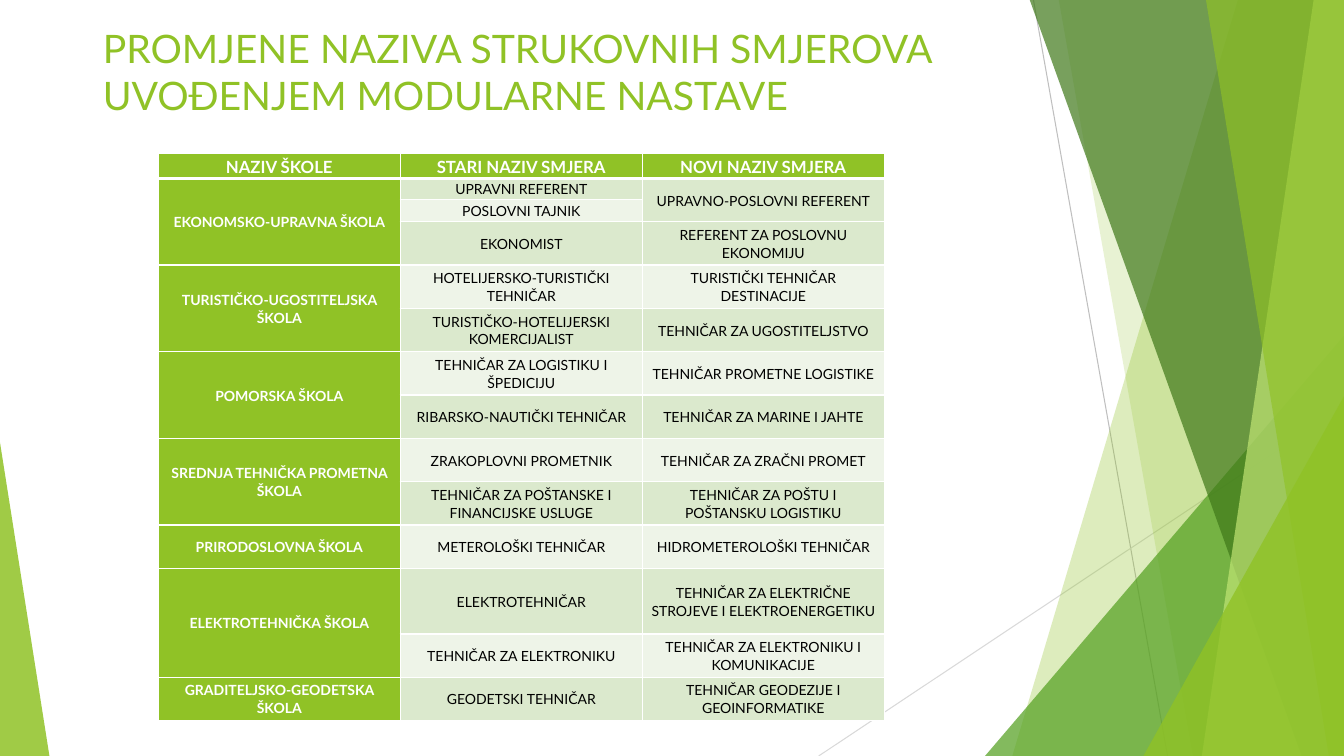
from dataclasses import dataclass

from lxml.etree import SubElement
from pptx import Presentation
from pptx.dml.color import RGBColor
from pptx.enum.shapes import MSO_CONNECTOR as Connector, MSO_SHAPE as Shape
from pptx.enum.text import MSO_ANCHOR as Anchor, MSO_AUTO_SIZE as AutoSize, PP_ALIGN as Align
from pptx.oxml.ns import qn
from pptx.util import Pt

PX = 9144


@dataclass(frozen=True)
class Theme:
    font: str = "Lato"
    green: str = "90C226"
    leaf: str = "54A021"
    forest: str = "3F7819"
    lime: str = "C0E474"
    band_dark: str = "DBE9CD"
    band_light: str = "EEF4E8"
    white: str = "FFFFFF"
    black: str = "000000"
    line_dark: str = "BFBFBF"
    line_light: str = "D9D9D9"
    title_size: int = 28
    head_size: int = 12
    cell_size: int = 10


class SlideBuilder:
    def __init__(self, s, theme):
        self.s = s
        self.theme = theme
        self.decor = s.shapes.add_group_shape().shapes

    def style(self, p, size, color, bold=False):
        p.font.name = self.theme.font
        p.font.size = Pt(size)
        p.font.bold = bold
        p.font.color.rgb = RGBColor.from_string(color)

    def paint(self, sp, color, opacity):
        sp.shadow.inherit = False
        sp.line.fill.background()
        sp.fill.solid()
        sp.fill.fore_color.rgb = RGBColor.from_string(color)
        rgb = sp.element.spPr.find(f"{qn('a:solidFill')}/{qn('a:srgbClr')}")
        SubElement(rgb, qn("a:alpha"), val=str(opacity * 1000))

    def line(self, x1, y1, x2, y2, color):
        ends = [v * PX for v in (x1, y1, x2, y2)]
        cx = self.decor.add_connector(Connector.STRAIGHT, *ends)
        cx.line.color.rgb = RGBColor.from_string(color)
        cx.line.width = Pt(0.75)
        SubElement(cx.element.spPr, qn("a:effectLst"))

    def polygon(self, points, color, opacity):
        fb = self.decor.build_freeform(*points[0], scale=PX)
        fb.add_line_segments(points[1:], close=True)
        self.paint(fb.convert_to_shape(), color, opacity)

    def triangle(self, x, y, w, h, apex, color, opacity):
        box = [v * PX for v in (x, y, w, h)]
        sp = self.decor.add_shape(Shape.ISOSCELES_TRIANGLE, *box)
        sp.adjustments[0] = apex
        self.paint(sp, color, opacity)

    def title(self, text, x, y, w, h):
        sp = self.s.shapes.title
        sp.left, sp.top, sp.width, sp.height = (v * PX for v in (x, y, w, h))
        tf = sp.text_frame
        tf.text = text
        tf.word_wrap = True
        tf.auto_size = AutoSize.NONE
        tf.vertical_anchor = Anchor.TOP
        p = tf.paragraphs[0]
        p.alignment = Align.LEFT
        self.style(p, self.theme.title_size, self.theme.green)
        sp.element.getparent().append(sp.element)

    def cell(self, cell, text, fill, size, color, bold, top, bottom):
        cell.margin_left = cell.margin_right = 7 * PX
        cell.margin_top = cell.margin_bottom = 0
        cell.vertical_anchor = Anchor.MIDDLE
        tf = cell.text_frame
        tf.text = text or ""
        p = tf.paragraphs[0]
        p.alignment = Align.CENTER
        p.line_spacing = 1.07
        self.style(p, size, color, bold)
        tc_pr = cell._tc.get_or_add_tcPr()
        for side, width in (("L", 1), ("R", 1), ("T", top), ("B", bottom)):
            ln = SubElement(tc_pr, qn(f"a:ln{side}"), w=str(Pt(width)))
            SubElement(SubElement(ln, qn("a:solidFill")), qn("a:srgbClr"), val=self.theme.white)
        cell.fill.solid()
        cell.fill.fore_color.rgb = RGBColor.from_string(fill)

    def table(self, rows, x, y, col_width, heights):
        t = self.theme
        cols = len(rows[0])
        box = [v * PX for v in (x, y, col_width * cols, sum(heights))]
        tb = self.s.shapes.add_table(len(rows), cols, *box).table
        tb.horz_banding = False
        for col in tb.columns:
            col.width = col_width * PX
        for i, (row, height) in enumerate(zip(rows, heights)):
            tb.rows[i].height = height * PX
            band = t.band_dark if i % 2 else t.band_light
            for j, text in enumerate(row):
                head = i == 0 or j == 0
                self.cell(
                    tb.cell(i, j), text,
                    fill=t.green if head else band,
                    size=t.cell_size if i else t.head_size,
                    color=t.white if head else t.black,
                    bold=head,
                    top=3 if i == 1 else 1,
                    bottom=1 if i else 3,
                )
        for j in range(cols):
            starts = [i for i, row in enumerate(rows) if row[j]] + [len(rows)]
            for first, after in zip(starts, starts[1:]):
                if after - first > 1:
                    tb.cell(first, j).merge(tb.cell(after - 1, j))


HEADINGS = ("NAZIV ŠKOLE", "STARI NAZIV SMJERA", "NOVI NAZIV SMJERA")
SCHOOLS = [
    ("EKONOMSKO-UPRAVNA ŠKOLA", [
        ("UPRAVNI REFERENT", "UPRAVNO-POSLOVNI REFERENT"),
        ("POSLOVNI TAJNIK", None),
        ("EKONOMIST", "REFERENT ZA POSLOVNU EKONOMIJU"),
    ]),
    ("TURISTIČKO-UGOSTITELJSKA ŠKOLA", [
        ("HOTELIJERSKO-TURISTIČKI TEHNIČAR", "TURISTIČKI TEHNIČAR DESTINACIJE"),
        ("TURISTIČKO-HOTELIJERSKI KOMERCIJALIST", "TEHNIČAR ZA UGOSTITELJSTVO"),
    ]),
    ("POMORSKA ŠKOLA", [
        ("TEHNIČAR ZA LOGISTIKU I ŠPEDICIJU", "TEHNIČAR PROMETNE LOGISTIKE"),
        ("RIBARSKO-NAUTIČKI TEHNIČAR", "TEHNIČAR ZA MARINE I JAHTE"),
    ]),
    ("SREDNJA TEHNIČKA PROMETNA ŠKOLA", [
        ("ZRAKOPLOVNI PROMETNIK", "TEHNIČAR ZA ZRAČNI PROMET"),
        ("TEHNIČAR ZA POŠTANSKE I FINANCIJSKE USLUGE", "TEHNIČAR ZA POŠTU I POŠTANSKU LOGISTIKU"),
    ]),
    ("PRIRODOSLOVNA ŠKOLA", [("METEROLOŠKI TEHNIČAR", "HIDROMETEROLOŠKI TEHNIČAR")]),
    ("ELEKTROTEHNIČKA ŠKOLA", [
        ("ELEKTROTEHNIČAR", "TEHNIČAR ZA ELEKTRIČNE STROJEVE I ELEKTROENERGETIKU"),
        ("TEHNIČAR ZA ELEKTRONIKU", "TEHNIČAR ZA ELEKTRONIKU I KOMUNIKACIJE"),
    ]),
    ("GRADITELJSKO-GEODETSKA ŠKOLA", [("GEODETSKI TEHNIČAR", "TEHNIČAR GEODEZIJE I GEOINFORMATIKE")]),
]


def main():
    prs = Presentation()
    prs.slide_width, prs.slide_height = 1333 * PX, 750 * PX
    theme = Theme()
    b = SlideBuilder(prs.slides.add_slide(prs.slide_layouts[5]), theme)

    def blade(top, bottom, color, opacity):
        b.polygon([(top, -1), (1333, -1), (1333, 750), (bottom, 750)], color, opacity)

    b.line(1025, 0, 1158, 750, theme.line_dark)
    b.line(1333, 403, 812, 750, theme.line_light)
    blade(1228, 1004, theme.green, 30)
    blade(1050, 1183, theme.green, 20)
    b.triangle(977, 333, 356, 417, 1, theme.leaf, 72)
    blade(1021, 1291, theme.forest, 70)
    blade(1303, 1192, theme.lime, 70)
    blade(1196, 1318, theme.green, 65)
    b.triangle(1134, 393, 199, 357, 1, theme.green, 80)
    b.triangle(0, 439, 49, 311, 0, theme.green, 85)

    b.title("PROMJENE NAZIVA STRUKOVNIH SMJEROVA UVOĐENJEM MODULARNE NASTAVE", 92, 19, 929, 145)
    rows = [HEADINGS] + [
        (None if k else school, old, new)
        for school, courses in SCHOOLS
        for k, (old, new) in enumerate(courses)
    ]
    b.table(rows, 157, 152, 240, [25, 21, 22] + [43] * 8 + [65, 43, 43])
    prs.save("out.pptx")


if __name__ == "__main__":
    main()
